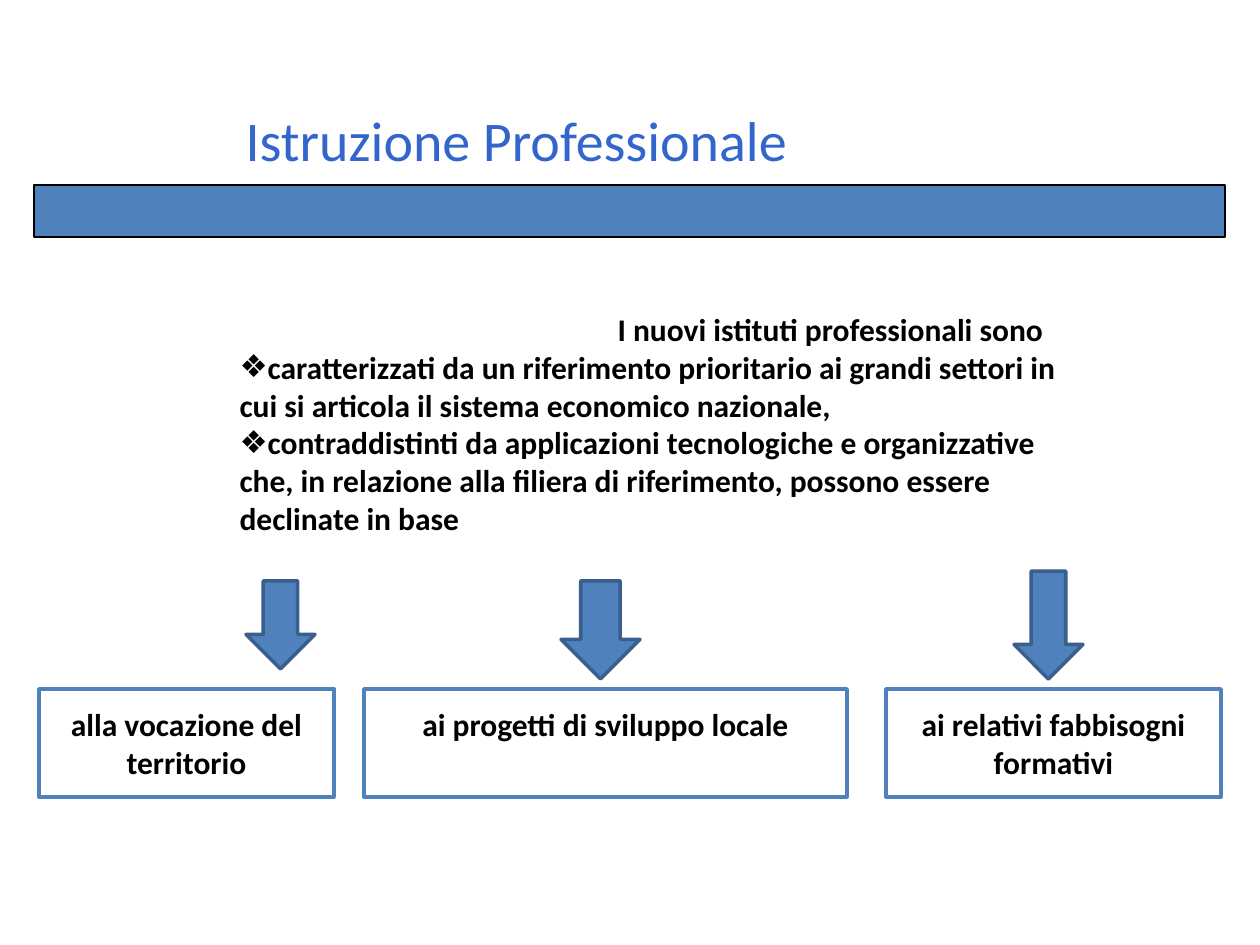
"""Build the slide on the new vocational institutes."""
import dataclasses

import lxml.etree
import pptx
import pptx.dml.color
import pptx.enum.shapes
import pptx.enum.text
import pptx.oxml.ns
import pptx.util


@dataclasses.dataclass(frozen=True)
class Theme:
    font: str = "Calibri"
    title_size: int = 32
    text_size: int = 18
    title: str = "3366CC"
    text: str = "000000"
    accent: str = "4F81BD"
    arrow_line: str = "3A5F8C"
    paper: str = "FFFFFF"


theme = Theme()
color = pptx.dml.color.RGBColor.from_string
kinds = pptx.enum.shapes.MSO_SHAPE
anchors = pptx.enum.text.MSO_ANCHOR
alignments = pptx.enum.text.PP_ALIGN
SCALE = 914400 / 126


def place(box):
    return [pptx.util.Emu(round(length * SCALE)) for length in box]


def add_filled(kind, box, fill, line, width):
    shape = slide.shapes.add_shape(kind, *place(box))
    shape.shadow.inherit = False
    shape.fill.solid()
    shape.fill.fore_color.rgb = color(fill)
    shape.line.color.rgb = color(line)
    shape.line.width = pptx.util.Pt(width)
    return shape


presentation = pptx.Presentation()
presentation.slide_width, presentation.slide_height = place((1260, 945))
slide = presentation.slides.add_slide(presentation.slide_layouts[1])

title = slide.shapes.title
title.left, title.top, title.width, title.height = place((233, 26, 965, 158))
title.text_frame.text = "Istruzione Professionale"
title.text_frame.auto_size = pptx.enum.text.MSO_AUTO_SIZE.NONE
title.text_frame.vertical_anchor = anchors.BOTTOM
title.text_frame.margin_bottom = place([11])[0]
paragraph = title.text_frame.paragraphs[0]
paragraph.alignment = alignments.LEFT
paragraph.font.name = theme.font
paragraph.font.size = pptx.util.Pt(theme.title_size)
paragraph.font.color.rgb = color(theme.title)

add_filled(kinds.RECTANGLE, (34, 185, 1191, 52), theme.accent, theme.text, 0.75)

body = slide.placeholders[1]
body.left, body.top, body.width, body.height = place((227, 266, 847, 317))
body.text_frame.auto_size = pptx.enum.text.MSO_AUTO_SIZE.NONE
body.text_frame.margin_top = place([44])[0]
body.text_frame.text = "\n".join((
    "I nuovi istituti professionali sono",
    "caratterizzati da un riferimento prioritario ai grandi settori in cui si articola "
    "il sistema economico nazionale,",
    "contraddistinti da applicazioni tecnologiche e organizzative che, in relazione alla "
    "filiera di riferimento, possono essere declinate in base",
))
for paragraph, margin, bullet in zip(body.text_frame.paragraphs, (378, 0, 0), (None, "❖", "❖")):
    paragraph.space_before = pptx.util.Pt(0)
    paragraph.font.name = theme.font
    paragraph.font.size = pptx.util.Pt(theme.text_size)
    paragraph.font.bold = True
    paragraph.font.color.rgb = color(theme.text)
    properties = paragraph._p.get_or_add_pPr()
    properties.set("marL", str(place([margin])[0]))
    properties.set("indent", "0")
    mark = lxml.etree.Element(pptx.oxml.ns.qn("a:buChar" if bullet else "a:buNone"))
    if bullet:
        mark.set("char", bullet)
    properties.find(pptx.oxml.ns.qn("a:defRPr")).addprevious(mark)

for left, width, text in (
    (39, 295, "alla vocazione del territorio"),
    (364, 483, "ai progetti di sviluppo locale"),
    (886, 335, "ai relativi fabbisogni formativi"),
):
    shape = add_filled(kinds.RECTANGLE, (left, 689, width, 108), theme.paper, theme.accent, 2)
    shape.text_frame.text = text
    shape.text_frame.word_wrap = True
    shape.text_frame.vertical_anchor = anchors.TOP
    shape.text_frame.margin_top = place([16])[0]
    paragraph = shape.text_frame.paragraphs[0]
    paragraph.alignment = alignments.CENTER
    paragraph.font.name = theme.font
    paragraph.font.size = pptx.util.Pt(theme.text_size)
    paragraph.font.bold = True
    paragraph.font.color.rgb = color(theme.text)

for box in ((246, 581, 69, 88), (561, 581, 79, 98), (1014, 571, 69, 108)):
    add_filled(kinds.DOWN_ARROW, box, theme.accent, theme.arrow_line, 2)

presentation.save("out.pptx")
